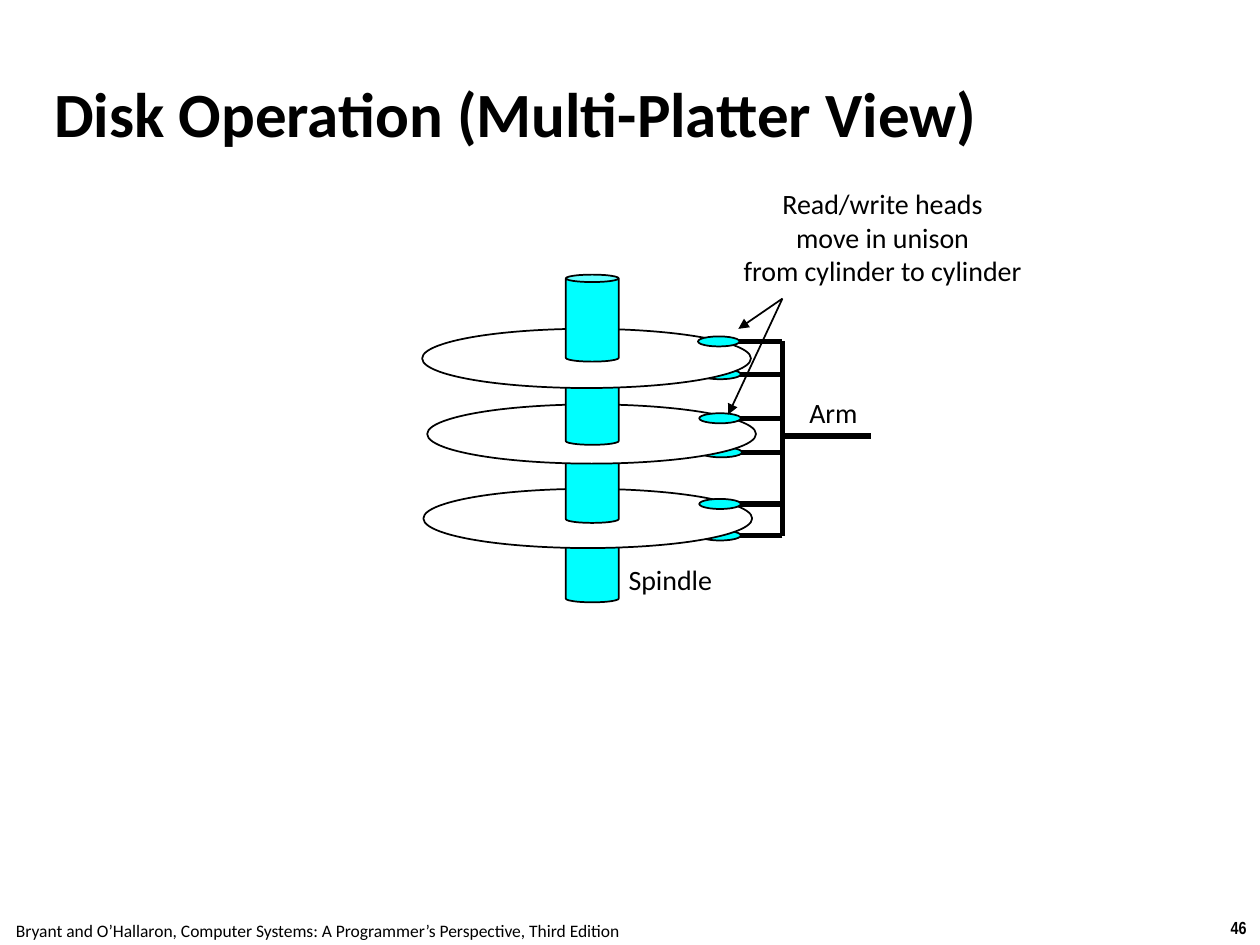
from collections import namedtuple
from dataclasses import dataclass

from pptx import Presentation
from pptx.dml.color import RGBColor
from pptx.enum.shapes import MSO_CONNECTOR, MSO_SHAPE
from pptx.enum.text import MSO_ANCHOR, MSO_AUTO_SIZE, PP_ALIGN
from pptx.oxml.ns import qn
from pptx.util import Emu, Pt
from lxml.etree import SubElement

PX = 9144
Box = namedtuple("Box", "left top width height")


@dataclass(frozen=True)
class Theme:
    """Colours, fonts, type sizes and line widths of the slide."""
    ink: RGBColor = RGBColor(0, 0, 0)
    platter: RGBColor = RGBColor(255, 255, 255)
    metal: RGBColor = RGBColor(0, 255, 255)
    font: str = "Calibri"
    number_font: str = "Arial Narrow"
    title_size: int = 36
    label_size: int = 16
    footer_size: int = 10
    thin: int = 1
    thick: int = 3


THEME = Theme()


def px(*lengths):
    """Turn px lengths into EMU."""
    return [Emu(length * PX) for length in lengths]


def add_text(slide, box, lines, size, margins=(5, 5), wrap=False, align=PP_ALIGN.CENTER,
             anchor=MSO_ANCHOR.MIDDLE, resize=MSO_AUTO_SIZE.SHAPE_TO_FIT_TEXT,
             font=THEME.font, bold=False):
    """Add a text box with one paragraph for each line."""
    frame = slide.shapes.add_textbox(*px(*box)).text_frame
    side, edge = px(*margins)
    frame_format = {"margin_left": side, "margin_right": side, "margin_top": edge,
                    "margin_bottom": edge, "word_wrap": wrap,
                    "vertical_anchor": anchor, "auto_size": resize}
    for name, value in frame_format.items():
        setattr(frame, name, value)
    frame.text = "\n".join(lines)
    for paragraph in frame.paragraphs:
        paragraph.alignment = align
        for name, value in {"name": font, "size": Pt(size), "bold": bold}.items():
            setattr(paragraph.runs[0].font, name, value)
        paragraph.runs[0].font.color.rgb = THEME.ink


def add_solid(slide, kind, box, fill):
    """Add an outlined preset shape without a shadow."""
    shape = slide.shapes.add_shape(kind, *px(*box))
    shape.shadow.inherit = False
    shape.fill.solid()
    shape.fill.fore_color.rgb = fill
    shape.line.color.rgb = THEME.ink
    shape.line.width = Pt(THEME.thin)
    return shape


def add_line(slide, start, end, width, arrow=False):
    """Add a straight line, with an arrowhead at its end if asked."""
    connector = slide.shapes.add_connector(MSO_CONNECTOR.STRAIGHT, *px(*start, *end))
    connector.line.color.rgb = THEME.ink
    connector.line.width = Pt(width)
    if arrow:
        SubElement(connector.line._get_or_add_ln(), qn("a:tailEnd"), type="triangle")
    SubElement(connector._element.spPr, qn("a:effectLst"))


def add_heads(slide, box, offsets):
    """Add read/write heads, each joined to the right edge of the box."""
    for x, y in offsets:
        middle = box.top + y + 4
        add_line(slide, (box.left + box.width, middle), (box.left + 17, middle), THEME.thick)
        add_solid(slide, MSO_SHAPE.OVAL, (box.left + x, box.top + y, 33, 8), THEME.metal)


def add_spindle(slide, left, top):
    """Add one section of the spindle."""
    section = add_solid(slide, MSO_SHAPE.CAN, (left, top, 42, 69), THEME.metal)
    section.adjustments[0] = 0.14


def add_platters(slide, box):
    """Stack spindle sections and platters from the bottom up."""
    for spindle_y, platter_x, platter_y in ((191, 1, 170), (128, 4, 103), (66, 0, 43)):
        add_spindle(slide, box.left + 114, box.top + spindle_y)
        add_solid(slide, MSO_SHAPE.OVAL,
                  (box.left + platter_x, box.top + platter_y, 261, 47), THEME.platter)
    add_spindle(slide, box.left + 114, box.top)


def add_arm(slide, box):
    """Add the bar that carries the heads and the arm that moves it."""
    right = box.left + box.width
    add_line(slide, (right, box.top + 4), (right, box.top + box.height), THEME.thick)
    add_line(slide, (right, box.top + 79), (right + 70, box.top + 79), THEME.thick)


def add_drive(slide, box):
    """Add the platters with the heads below and above them."""
    heads = Box(box.left + 219, box.top + 49, 67, 158)
    add_heads(slide, heads, ((1, 26), (2, 88), (1, 154)))
    add_platters(slide, box)
    add_arm(slide, heads)
    add_heads(slide, heads, ((0, 0), (1, 61), (1, 129)))


def add_labels(slide, box):
    """Add the labels of the drive and the arrows to its heads."""
    labels = (((301, 181, 51, 33), ["Arm"], False),
              ((157, 313, 80, 33), ["Spindle"], False),
              ((250, 0, 231, 116), ["Read/write heads", "move in unison",
                                    "from cylinder to cylinder"], True))
    for (x, y, width, height), lines, wrap in labels:
        place = Box(box.left + x, box.top + y, width, height)
        add_text(slide, place, lines, THEME.label_size, wrap=wrap)
    start = (box.left + 286, box.top + 107)
    for x, y in ((251, 131), (243, 199)):
        add_line(slide, start, (box.left + x, box.top + y), THEME.thin, arrow=True)


def add_title(slide, box):
    """Add the slide title."""
    add_text(slide, box, ["Disk Operation (Multi-Platter View)"], THEME.title_size,
             margins=(4, 4), wrap=True, align=PP_ALIGN.LEFT,
             resize=MSO_AUTO_SIZE.NONE, bold=True)


def add_footer(slide, box):
    """Add the source line and the slide number."""
    style = {"size": THEME.footer_size, "margins": (10, 5), "anchor": MSO_ANCHOR.TOP}
    source = "Bryant and O’Hallaron, Computer Systems: A Programmer’s Perspective, Third Edition"
    add_text(slide, (box.left - 2, box.top + 2, 508, 27), [source], **style)
    add_text(slide, (box.left + box.width - 34, box.top, 34, 27), ["46"],
             font=THEME.number_font, bold=True, **style)


def main():
    """Build and save the slide."""
    presentation = Presentation()
    presentation.slide_width, presentation.slide_height = px(1000, 750)
    slide = presentation.slides.add_slide(presentation.slide_layouts[6])
    add_footer(slide, Box(0, 723, 1000, 27))
    add_title(slide, Box(39, 48, 830, 83))
    add_drive(slide, Box(335, 218, 356, 260))
    add_labels(slide, Box(335, 130, 481, 346))
    presentation.save("out.pptx")


if __name__ == "__main__":
    main()
